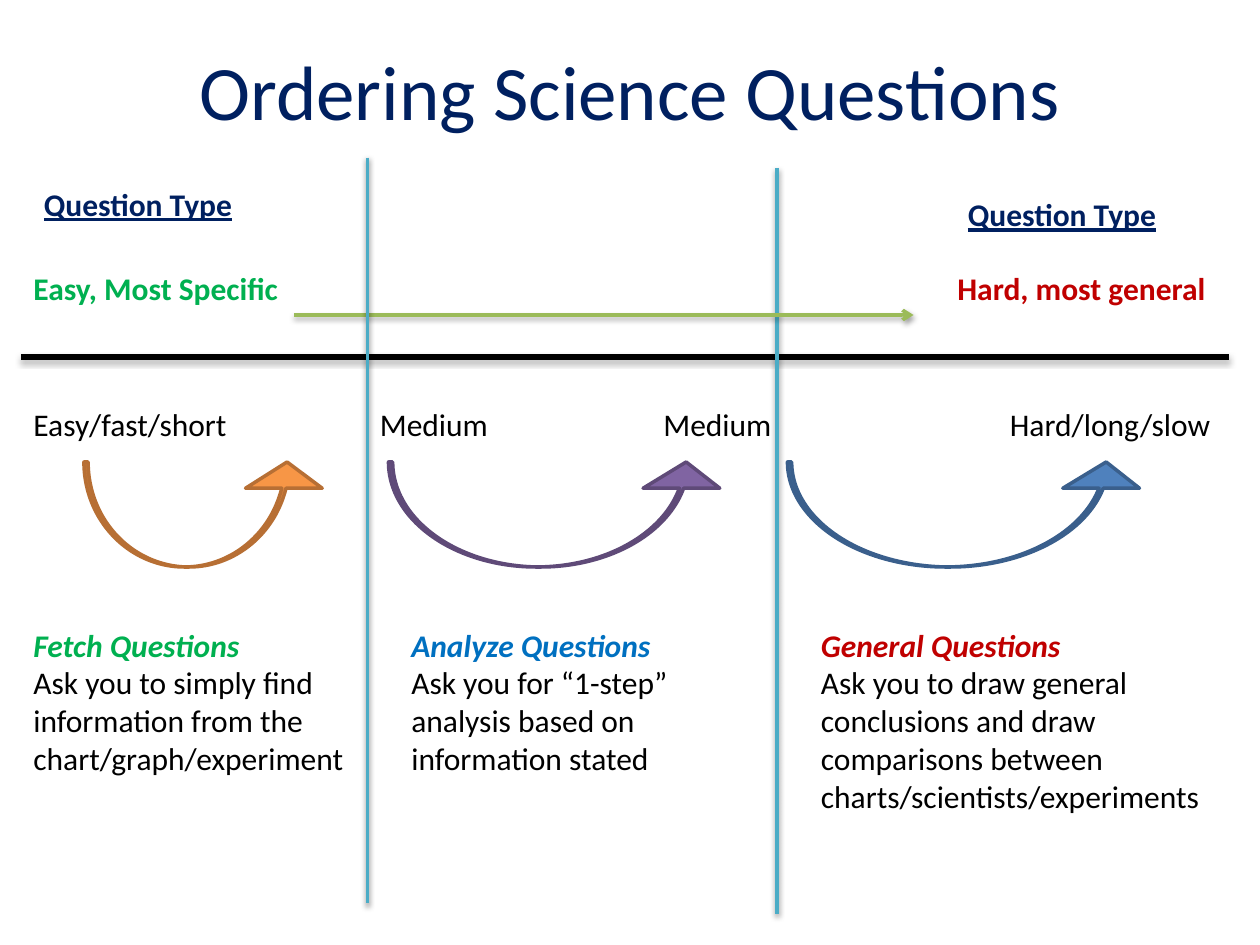
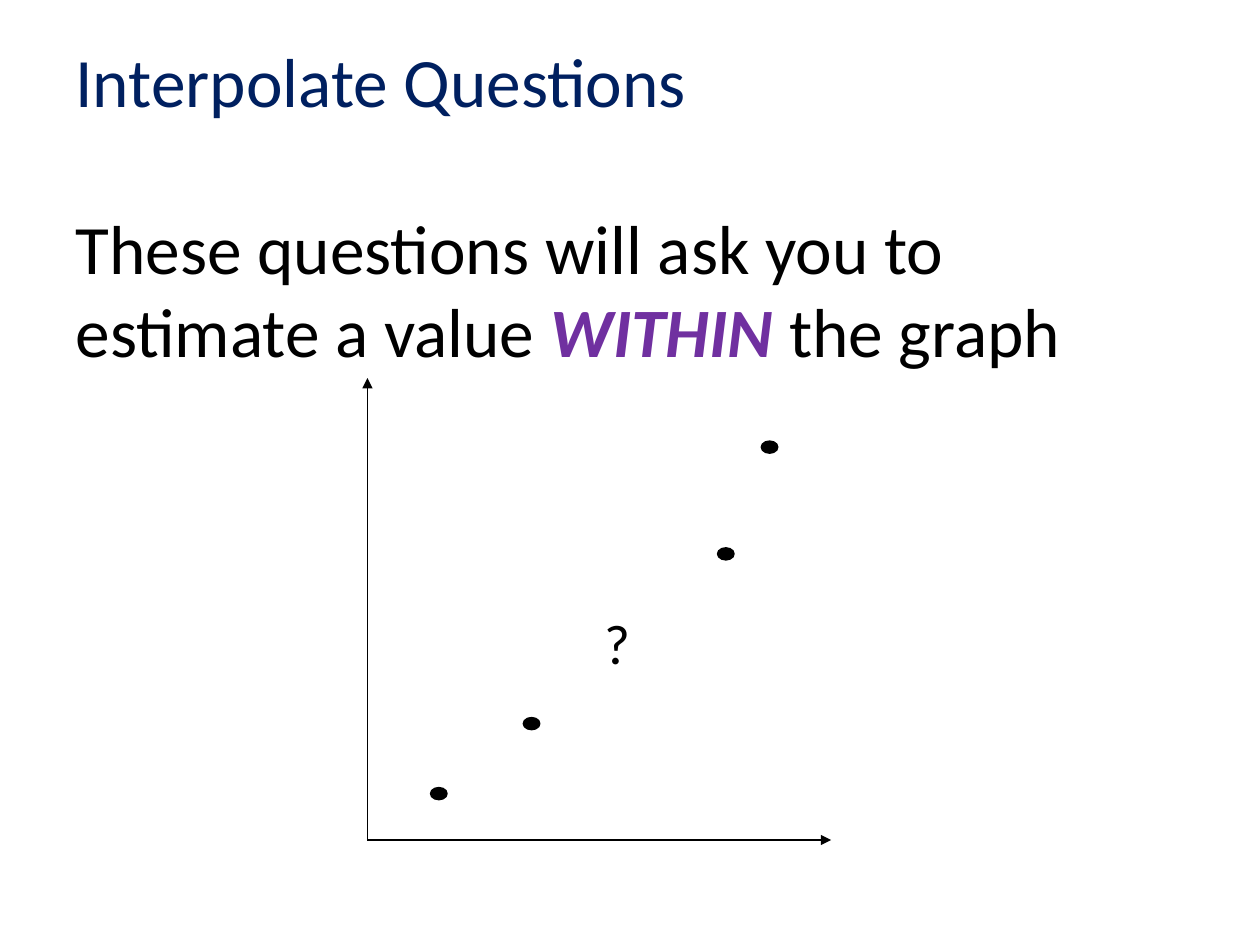
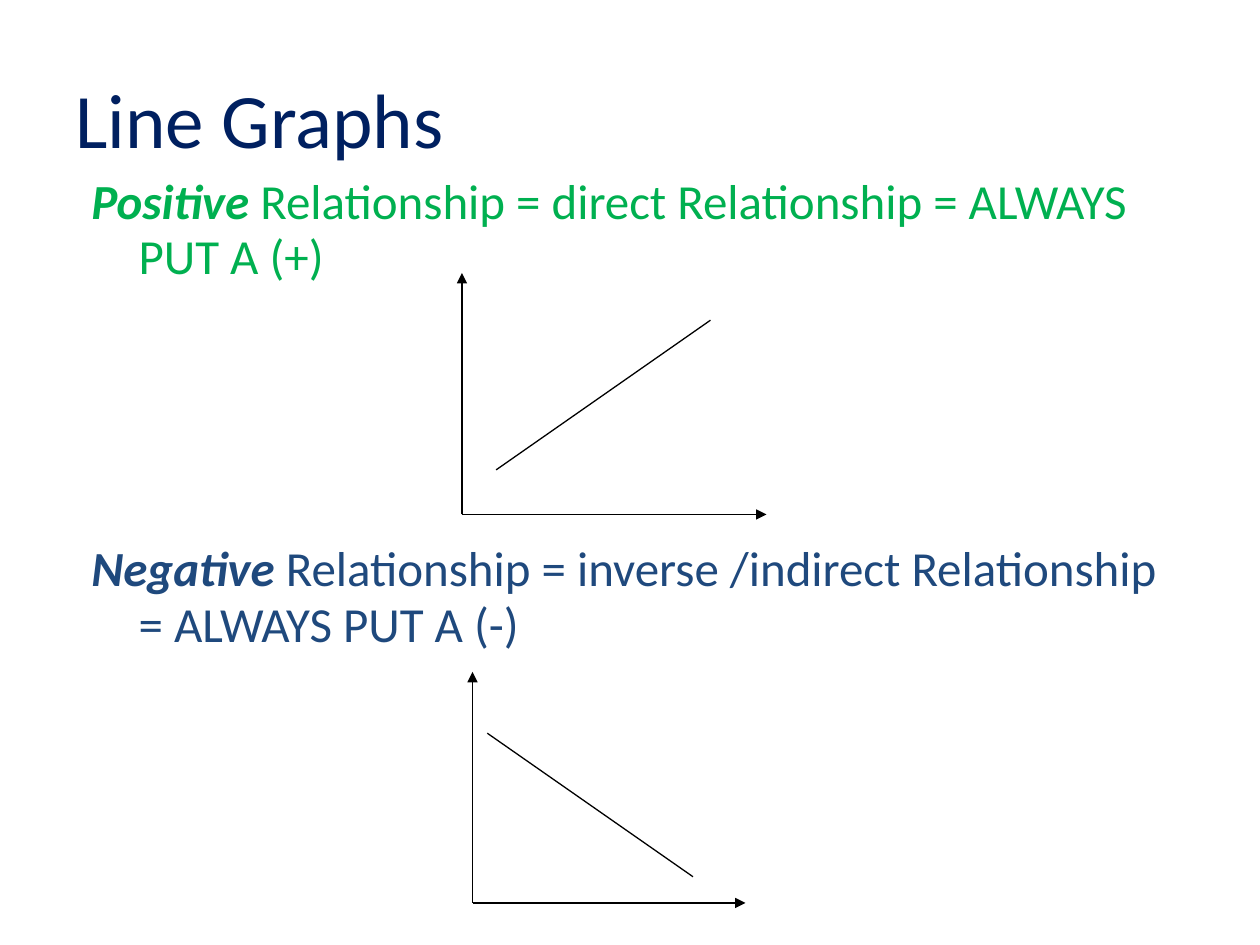
from dataclasses import dataclass

from lxml import etree
from pptx import Presentation
from pptx.dml.color import RGBColor
from pptx.enum.shapes import MSO_CONNECTOR, MSO_SHAPE
from pptx.enum.text import MSO_ANCHOR, MSO_AUTO_SIZE, PP_ALIGN
from pptx.oxml.ns import qn
from pptx.util import Pt

STRAIGHT = MSO_CONNECTOR.STRAIGHT
CURVED_ARROW, ELLIPSE, RECTANGLE = (
    MSO_SHAPE.CURVED_UP_ARROW, MSO_SHAPE.OVAL, MSO_SHAPE.RECTANGLE)
TOP, MIDDLE = MSO_ANCHOR.TOP, MSO_ANCHOR.MIDDLE
LEFT, CENTER = PP_ALIGN.LEFT, PP_ALIGN.CENTER
NO_FIT, GROW = MSO_AUTO_SIZE.NONE, MSO_AUTO_SIZE.SHAPE_TO_FIT_TEXT

FONT = "Calibri"
TITLE_AND_BODY, TITLE_ONLY = 1, 5
COLORS = {
    "black": "000000", "white": "FFFFFF", "navy": "002060",
    "green": "00B050", "red": "C00000", "blue": "0070C0",
    "purple": "7030A0", "slate": "1F497D", "teal": "4BACC6",
    "olive": "9BBB59", "orange": "F79646", "orange edge": "B76F34",
    "violet": "8064A2", "violet edge": "5F4A78",
    "steel": "4F81BD", "steel edge": "3A5F8C",
}


@dataclass
class TextRun:
    text: str
    color: str = "black"
    bold: bool = False
    italic: bool = False
    underline: bool = False


@dataclass
class Label:
    left: float
    top: float
    width: float
    height: float
    lines: list[TextRun]


@dataclass
class Line:
    start: tuple[float, float]
    end: tuple[float, float]
    color: str = "black"
    width: float = 0.75
    head: str = ""
    shadow_alpha: int = 0
    shadow_distance: float = 0


@dataclass
class CurvedArrow:
    left: float
    width: float
    color: str


@dataclass
class Graph:
    origin: tuple[float, float]
    right: float
    top: float


def rgb(color: str) -> RGBColor:
    return RGBColor.from_string(COLORS[color])


def write_runs(paragraph, runs: list[TextRun], size: float) -> None:
    for text_run in runs:
        run = paragraph.add_run()
        run.text = text_run.text
        font = run.font
        font.name, font.size = FONT, Pt(size)
        font.color.rgb = rgb(text_run.color)
        font.bold, font.italic = text_run.bold, text_run.italic
        font.underline = text_run.underline


def place(shape, left: float, top: float, width: float, height: float) -> None:
    shape.left, shape.top = Pt(left), Pt(top)
    shape.width, shape.height = Pt(width), Pt(height)


def write_title(slide, paragraphs: list[list[TextRun]], top: float,
                height: float = 90, size: float = 44,
                alignment=LEFT, gap: float = 0) -> None:
    title = slide.shapes.title
    place(title, 36, top, 648, height)
    frame = title.text_frame
    frame.auto_size, frame.vertical_anchor = NO_FIT, MIDDLE
    for index, runs in enumerate(paragraphs):
        paragraph = frame.add_paragraph() if index else frame.paragraphs[0]
        paragraph.alignment = alignment
        paragraph.space_before = Pt(gap if index else 0)
        write_runs(paragraph, runs, size)


def draw_label(shapes, label: Label) -> None:
    box = shapes.add_textbox(Pt(label.left), Pt(label.top),
                             Pt(label.width), Pt(label.height))
    frame = box.text_frame
    frame.word_wrap, frame.auto_size = True, GROW
    for index, text_run in enumerate(label.lines):
        paragraph = frame.add_paragraph() if index else frame.paragraphs[0]
        write_runs(paragraph, [text_run], 18)


def draw_line(shapes, line: Line) -> None:
    connector = shapes.add_connector(
        STRAIGHT, *(Pt(value) for value in line.start + line.end))
    connector.line.color.rgb = rgb(line.color)
    connector.line.width = Pt(line.width)
    properties = connector._element.spPr
    if line.head:
        etree.SubElement(properties.find(qn("a:ln")), qn("a:tailEnd"),
                         type=line.head)
    effects = etree.SubElement(properties, qn("a:effectLst"))
    if line.shadow_alpha:
        shadow = etree.SubElement(
            effects, qn("a:outerShdw"), blurRad=str(Pt(3.15)),
            dist=str(Pt(line.shadow_distance)), dir="5400000",
            rotWithShape="0")
        color = etree.SubElement(shadow, qn("a:srgbClr"), val=COLORS["black"])
        etree.SubElement(color, qn("a:alpha"),
                         val=str(line.shadow_alpha * 1000))


def draw_shape(shapes, kind, left: float, top: float, width: float,
               height: float, fill: str, edge: str, edge_width: float = 0.75):
    shape = shapes.add_shape(kind, Pt(left), Pt(top), Pt(width), Pt(height))
    shape.shadow.inherit = False
    shape.fill.solid()
    shape.fill.fore_color.rgb = rgb(fill)
    shape.line.color.rgb = rgb(edge)
    shape.line.width = Pt(edge_width)
    return shape


def draw_axes(shapes, graph: Graph) -> None:
    x, y = graph.origin
    for end in ((graph.right, y), (x, graph.top)):
        draw_line(shapes, Line(graph.origin, end, head="triangle"))


def build_ordering(presentation) -> None:
    slide = presentation.slides.add_slide(
        presentation.slide_layouts[TITLE_ONLY])
    write_title(slide, [[TextRun("Ordering Science Questions", "navy")]],
                top=12, height=78, alignment=CENTER)

    thin = {"width": 2, "shadow_alpha": 38, "shadow_distance": 1.6}
    for line in (
        Line((12, 204), (702, 204), width=3,
             shadow_alpha=35, shadow_distance=1.8),
        Line((444, 96), (444, 522), "teal", **thin),
        Line((168, 180), (522, 180), "olive", head="arrow", **thin),
        Line((210, 90), (210, 516), "teal", **thin),
    ):
        draw_line(slide.shapes, line)

    heading = TextRun("Question Type", "navy", bold=True, underline=True)
    medium = TextRun("Medium")
    for label in (
        Label(18, 102, 150, 29, [heading]),
        Label(546, 108, 150, 29, [heading]),
        Label(12, 150, 168, 29,
              [TextRun("Easy, Most Specific", "green", bold=True)]),
        Label(540, 150, 156, 29,
              [TextRun("Hard, most general", "red", bold=True)]),
        Label(12, 228, 150, 29, [TextRun("Easy/fast/short")]),
        Label(210, 228, 120, 29, [medium]),
        Label(372, 228, 132, 29, [medium]),
        Label(570, 228, 132, 29, [TextRun("Hard/long/slow")]),
        Label(12, 354, 192, 94, [
            TextRun("Fetch Questions", "green", bold=True, italic=True),
            TextRun("Ask you to simply find information from the "
                    "chart/graph/experiment")]),
        Label(228, 354, 216, 117, [
            TextRun("Analyze Questions", "blue", bold=True, italic=True),
            TextRun("Ask you for “1-step” analysis based on "
                    "information stated")]),
        Label(462, 354, 234, 117, [
            TextRun("General Questions", "red", bold=True, italic=True),
            TextRun("Ask you to draw general conclusions and draw "
                    "comparisons between charts/scientists/experiments")]),
    ):
        draw_label(slide.shapes, label)

    for arrow in (CurvedArrow(48, 138, "orange"),
                  CurvedArrow(222, 192, "violet"),
                  CurvedArrow(450, 204, "steel")):
        shape = draw_shape(slide.shapes, CURVED_ARROW, arrow.left, 264,
                           arrow.width, 60, arrow.color,
                           f"{arrow.color} edge", 2)
        for index, value in enumerate((0.04, 0.73, 0.25)):
            shape.adjustments[index] = value


def build_interpolate(presentation) -> None:
    slide = presentation.slides.add_slide(
        presentation.slide_layouts[TITLE_ONLY])
    write_title(slide, [
        [TextRun("Interpolate Questions", "navy")],
        [TextRun("These questions will ask you to estimate a value "),
         TextRun("WITHIN ", "purple", bold=True, italic=True),
         TextRun("the graph")],
    ], top=72, size=39.6, gap=48)

    axes = slide.shapes.add_group_shape().shapes
    draw_axes(axes, Graph((210, 480), 475, 216))

    points = slide.shapes.add_group_shape().shapes
    for left, top in ((246, 450), (299, 410), (410, 313), (435, 252)):
        draw_shape(points, ELLIPSE, left, top, 9.5, 7, "black", "black")
    unknown = draw_shape(points, RECTANGLE, 338.5, 344, 57, 50,
                         "white", "white")
    unknown.text_frame.vertical_anchor = TOP
    paragraph = unknown.text_frame.paragraphs[0]
    paragraph.alignment = LEFT
    write_runs(paragraph, [TextRun("?")], 32)


def build_line_graphs(presentation) -> None:
    slide = presentation.slides.add_slide(
        presentation.slide_layouts[TITLE_AND_BODY])
    write_title(slide, [[TextRun("Line Graphs", "navy")]], top=22)

    body = slide.placeholders[1]
    place(body, 36, 96, 648, 198)
    frame = body.text_frame
    frame.auto_size, frame.vertical_anchor = NO_FIT, TOP
    relationships = (
        ("Positive", " Relationship = direct Relationship = "
                     "ALWAYS PUT A (+)", "green"),
        ("Negative", " Relationship = inverse /indirect Relationship = "
                     "ALWAYS PUT A (-)", "slate"),
    )
    for index, (name, meaning, color) in enumerate(relationships):
        paragraph = frame.add_paragraph() if index else frame.paragraphs[0]
        paragraph.line_spacing = 0.95
        paragraph.space_before = Pt(146 if index else 0)
        properties = paragraph._p.get_or_add_pPr()
        properties.set("marL", str(Pt(36)))
        properties.set("indent", str(Pt(-27)))
        etree.SubElement(properties, qn("a:buNone"))
        write_runs(paragraph, [TextRun(name, color, bold=True, italic=True),
                               TextRun(meaning, color)], 28)

    for graph, trend in (
        (Graph((264, 294), 438, 156), Line((283.5, 268.5), (406, 183))),
        (Graph((270, 516), 426, 384), Line((278.5, 419), (396, 501))),
    ):
        shapes = slide.shapes.add_group_shape().shapes
        draw_axes(shapes, graph)
        draw_line(shapes, trend)


def main() -> None:
    presentation = Presentation()
    presentation.slide_width, presentation.slide_height = Pt(720), Pt(540)
    build_ordering(presentation)
    build_interpolate(presentation)
    build_line_graphs(presentation)
    presentation.save("out.pptx")


if __name__ == "__main__":
    main()
